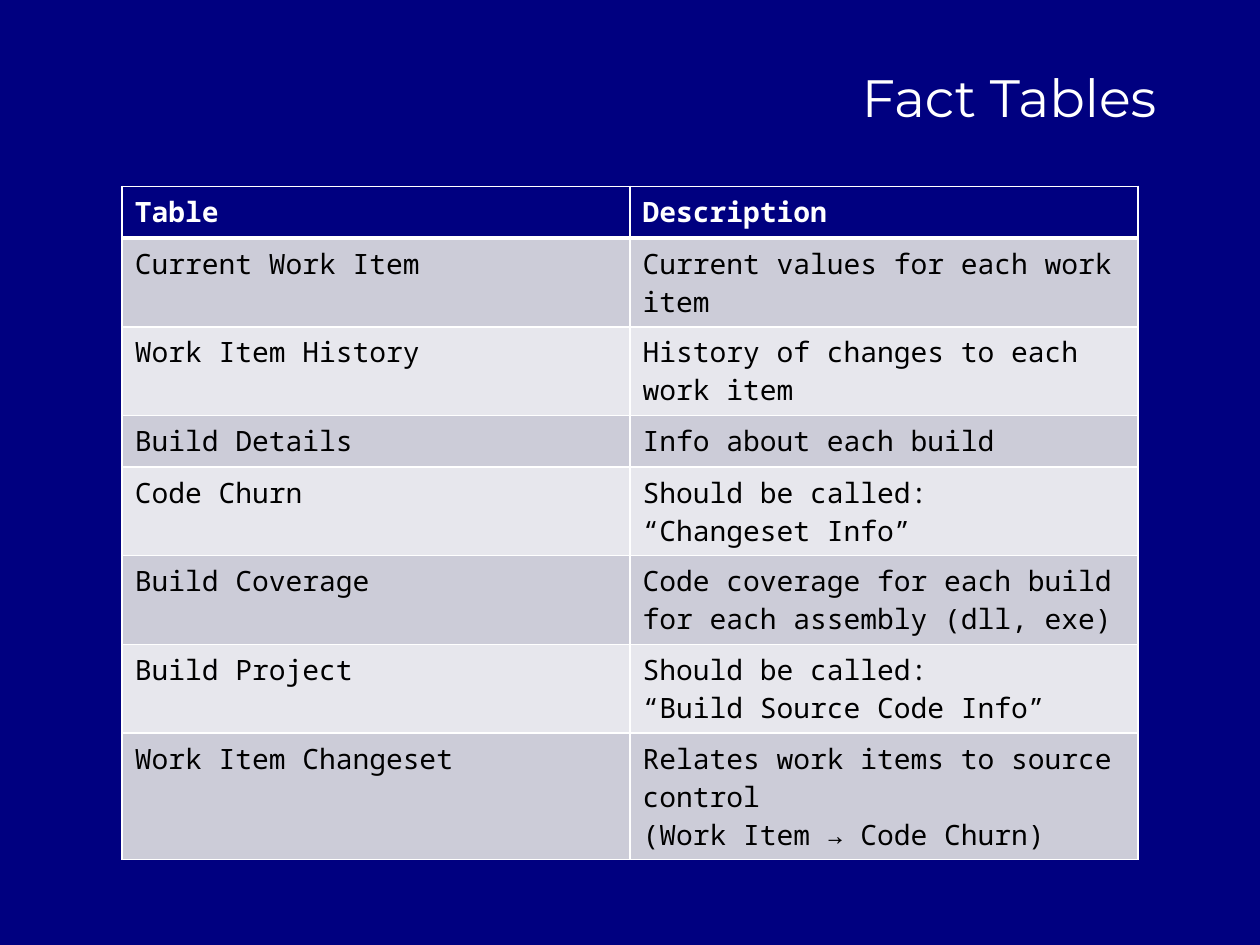
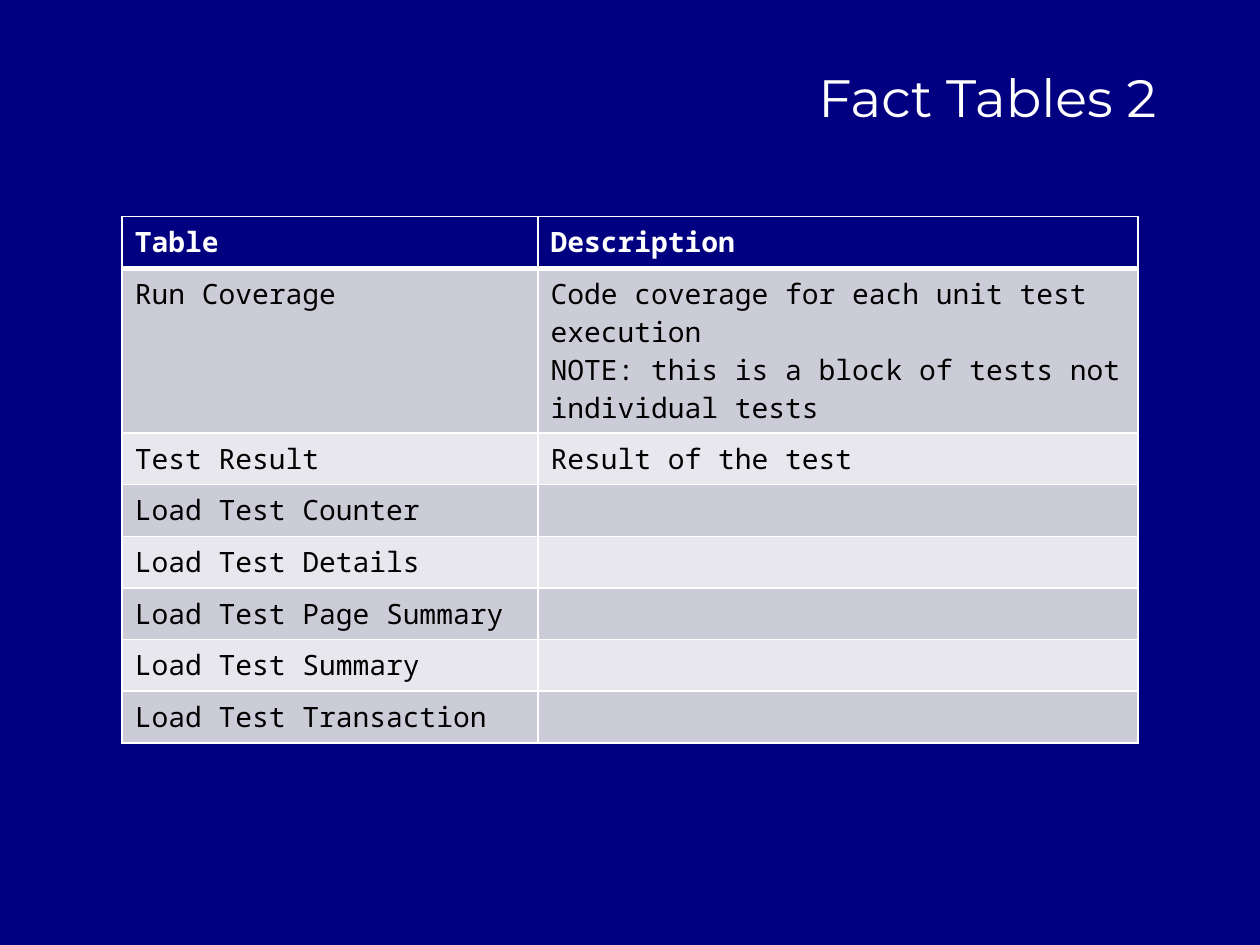
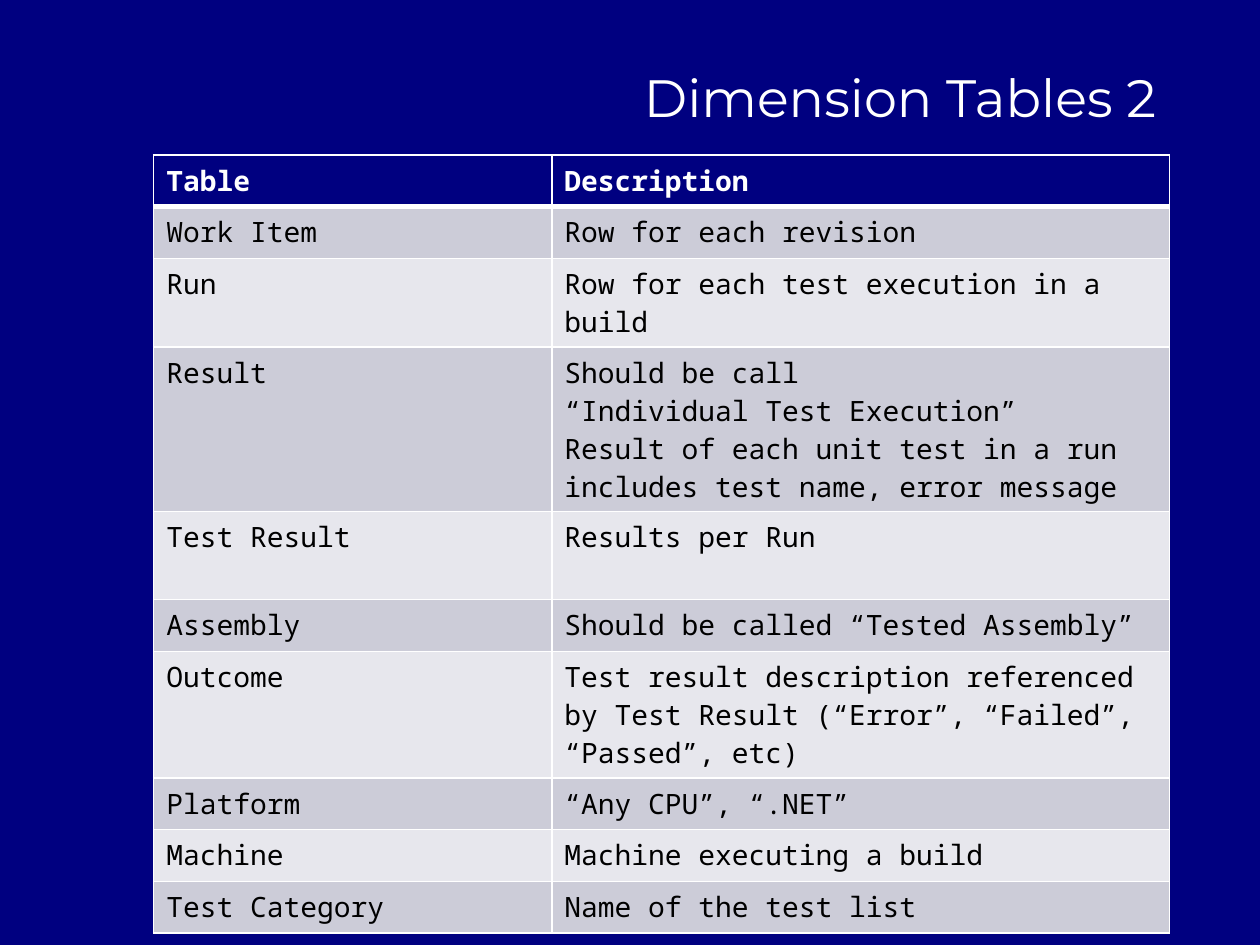
"""Build three slides that list the fact and dimension tables of a data warehouse."""
from dataclasses import dataclass, field

from lxml import etree
from pptx import Presentation
from pptx.dml.color import RGBColor
from pptx.enum.text import MSO_ANCHOR, PP_ALIGN
from pptx.oxml.ns import qn
from pptx.util import Inches, Pt

RIGHT = PP_ALIGN.RIGHT
MIDDLE = MSO_ANCHOR.MIDDLE

COLORS = {
    "navy": "000080",
    "white": "FFFFFF",
    "black": "000000",
    "band_dark": "CCCCD8",
    "band_light": "E7E7ED",
}
TITLE_FONT = "Montserrat"
TABLE_FONT = "Noto Sans Mono"
TITLE_ONLY = 5
ROW_HEIGHT = 0.41
THIN, THICK = 1, 3
HEADER = ("Table", "Description")


@dataclass
class TableSlide:
    title: str
    left: float
    top: float
    column_widths: tuple[float, float]
    rows: list[tuple[str, str]]
    tall_rows: dict[str, float] = field(default_factory=dict)


TABLE_SLIDES = [
    TableSlide("Fact Tables", 0.97, 1.48, (4.03, 4.03), [
        ("Current Work Item", "Current values for each work item"),
        ("Work Item History", "History of changes to each work item"),
        ("Build Details", "Info about each build"),
        ("Code Churn", "Should be called:\v“Changeset Info”"),
        ("Build Coverage", "Code coverage for each build for each assembly (dll, exe)"),
        ("Build Project", "Should be called:\v“Build Source Code Info”"),
        ("Work Item Changeset",
         "Relates work items to source control\v(Work Item → Code Churn)"),
    ]),
    TableSlide("Fact Tables 2", 0.97, 1.72, (3.3, 4.76), [
        ("Run Coverage",
         "Code coverage for each unit test execution\n"
         "NOTE: this is a block of tests not individual tests"),
        ("Test Result", "Result of the test"),
        ("Load Test Counter", ""),
        ("Load Test Details", ""),
        ("Load Test Page Summary", ""),
        ("Load Test Summary", ""),
        ("Load Test Transaction", ""),
    ]),
    TableSlide("Dimension Tables 2", 1.22, 1.23, (3.16, 4.9), [
        ("Work Item", "Row for each revision"),
        ("Run", "Row for each test execution in a build"),
        ("Result",
         "Should be call\v“Individual Test Execution”\v"
         "Result of each unit test in a run\vincludes test name, error message"),
        ("Test Result", "Results per Run"),
        ("Assembly", "Should be called “Tested Assembly”"),
        ("Outcome",
         "Test result description referenced by Test Result "
         "(“Error”, “Failed”, “Passed”, etc)"),
        ("Platform", "“Any CPU”, “.NET”"),
        ("Machine", "Machine executing a build"),
        ("Test Category", "Name of the test list"),
    ], {"Test Result": 0.7}),
]


def rgb(name: str) -> RGBColor:
    """Return the named colour."""
    return RGBColor.from_string(COLORS[name])


def set_font(paragraph, name: str, size: int, color: str, bold: bool = False) -> None:
    """Format a whole paragraph."""
    font = paragraph.font
    font.name, font.size, font.bold = name, Pt(size), bold
    font.color.rgb = rgb(color)


def add_title(slide, text: str) -> None:
    """Place and format the title placeholder."""
    title = slide.shapes.title
    title.left, title.top = Inches(0.73), Inches(0.43)
    title.width, title.height = Inches(8.55), Inches(0.67)
    title.text_frame.text = text
    title.text_frame.vertical_anchor = MIDDLE
    paragraph = title.text_frame.paragraphs[0]
    paragraph.alignment = RIGHT
    set_font(paragraph, TITLE_FONT, 30, "white")


def set_borders(cell, top: int, bottom: int) -> None:
    """Draw white lines around a cell, with the given top and bottom widths."""
    properties = cell._tc.get_or_add_tcPr()
    widths = {"lnL": THIN, "lnR": THIN, "lnT": top, "lnB": bottom}
    for side, width in widths.items():
        line = etree.SubElement(properties, qn(f"a:{side}"), w=str(Pt(width)))
        fill = etree.SubElement(line, qn("a:solidFill"))
        etree.SubElement(fill, qn("a:srgbClr"), val=COLORS["white"])


def fill_cell(cell, text: str, row_index: int) -> None:
    """Write and format one cell by the rule for its row."""
    is_header = row_index == 0
    set_borders(cell, THICK if row_index == 1 else THIN, THICK if is_header else THIN)
    band = "band_dark" if row_index % 2 else "band_light"
    cell.fill.solid()
    cell.fill.fore_color.rgb = rgb("navy" if is_header else band)
    cell.text_frame.text = text
    for paragraph in cell.text_frame.paragraphs:
        set_font(paragraph, TABLE_FONT, 16, "white" if is_header else "black", is_header)


def add_table(slide, content: TableSlide) -> None:
    """Add the two-column table with its header row."""
    rows = [HEADER, *content.rows]
    heights = [content.tall_rows.get(name, ROW_HEIGHT) for name, _ in rows]
    table = slide.shapes.add_table(
        len(rows), len(HEADER), Inches(content.left), Inches(content.top),
        Inches(sum(content.column_widths)), Inches(sum(heights))).table
    for column, width in zip(table.columns, content.column_widths):
        column.width = Inches(width)
    for row_index, (texts, height) in enumerate(zip(rows, heights)):
        table.rows[row_index].height = Inches(height)
        for column_index, text in enumerate(texts):
            fill_cell(table.cell(row_index, column_index), text, row_index)


def main() -> None:
    """Build and save the presentation."""
    presentation = Presentation()
    presentation.slide_width, presentation.slide_height = Inches(10), Inches(7.5)
    background = presentation.slide_master.background.fill
    background.solid()
    background.fore_color.rgb = rgb("navy")
    for content in TABLE_SLIDES:
        slide = presentation.slides.add_slide(presentation.slide_layouts[TITLE_ONLY])
        add_title(slide, content.title)
        add_table(slide, content)
    presentation.save("out.pptx")


if __name__ == "__main__":
    main()
